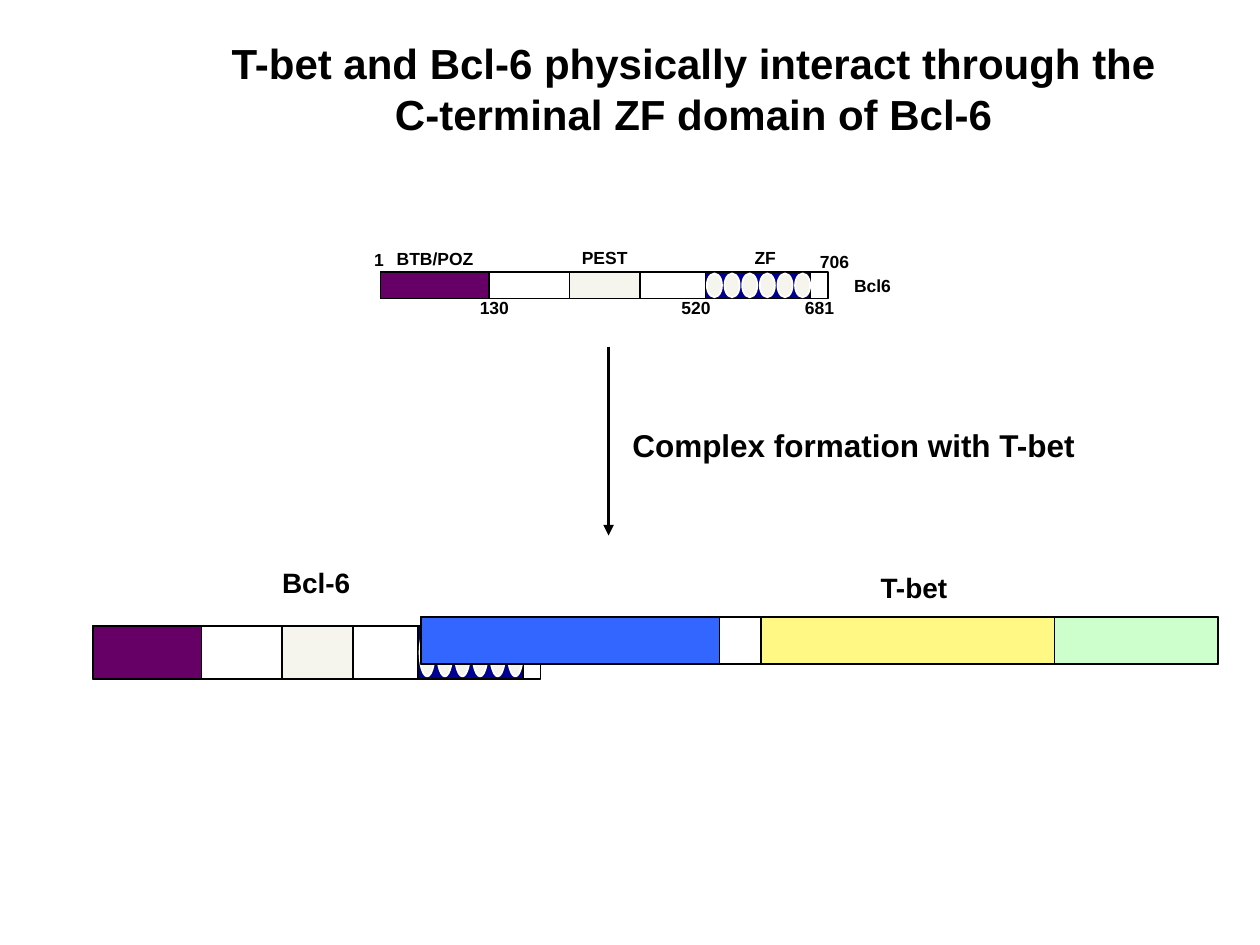
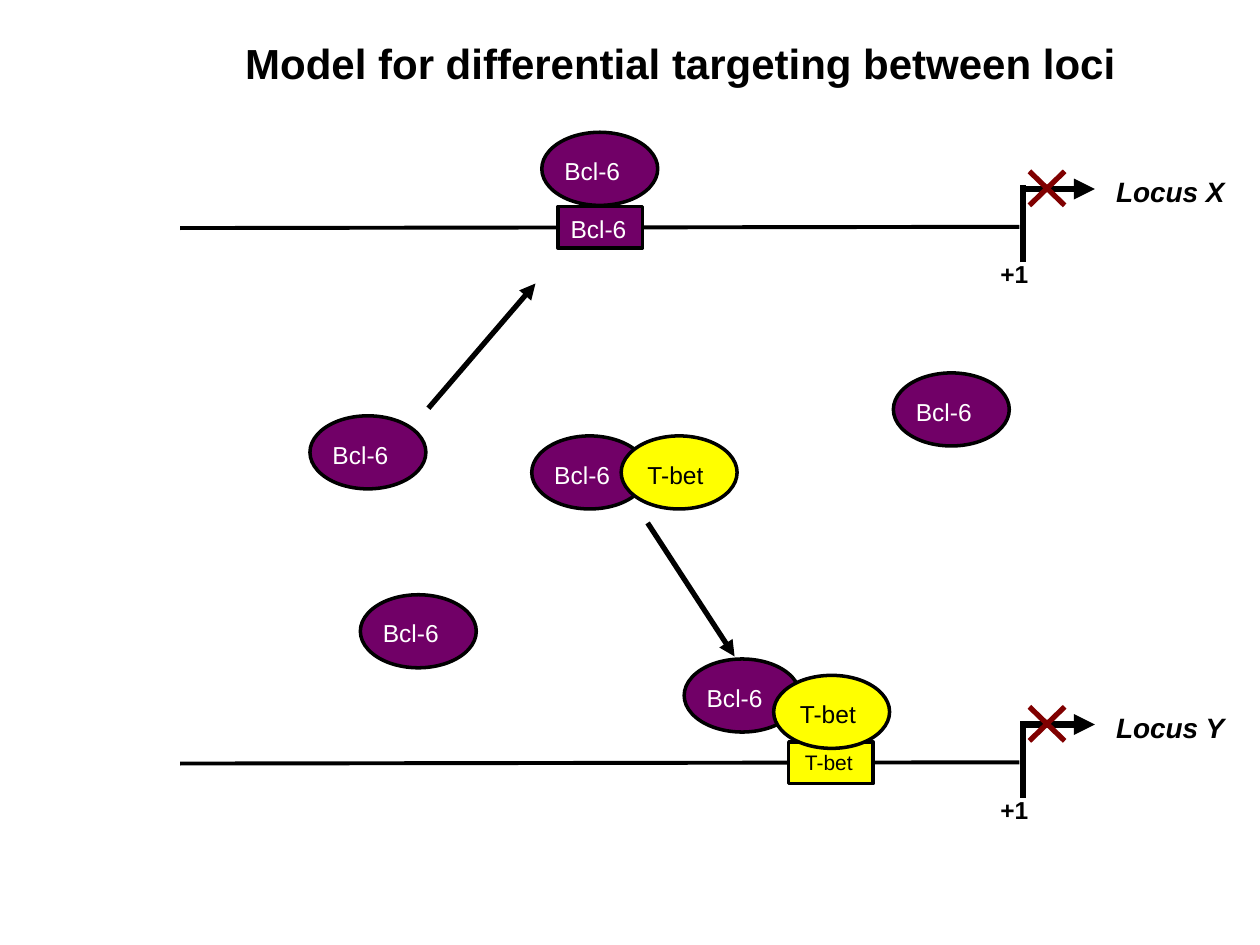
from lxml import etree
from pptx import Presentation
from pptx.dml.color import RGBColor
from pptx.enum.shapes import MSO_CONNECTOR, MSO_SHAPE
from pptx.enum.text import MSO_ANCHOR, MSO_AUTO_SIZE, PP_ALIGN
from pptx.oxml.ns import qn
from pptx.util import Inches, Pt

FONT = "Arial"
BLACK, WHITE, IVORY, NAVY = "000000", "FFFFFF", "F5F4ED", "000090"
PURPLE, BLUE, CREAM, MINT = "660066", "3366FF", "FFF885", "CCFFCC"
PLUM, YELLOW, RED = "710067", "FFFF00", "800000"

INTERACTION_TITLE = ["T-bet and Bcl-6 physically interact through the", "C-terminal ZF domain of Bcl-6"]
MODEL_TITLE = ["Model for differential targeting between loci"]

BCL6_WIDTH = 3.55
BCL6_DOMAINS = [(0, 0.86, PURPLE), (2.58, 0.83, NAVY), (1.5, 0.56, IVORY)]
ZINC_FINGERS, FINGER_START, FINGER_STEP, FINGER_WIDTH = 6, 2.59, 0.14, 0.12
BCL6_BARS = [(3.02, 2.16, 0.21), (0.74, 4.97, 0.42)]
TBET_BAR = (3.34, 4.9, 6.33, 0.37)
TBET_DOMAINS = [(2.7, 2.33, CREAM), (5.03, 1.3, MINT), (0, 2.37, BLUE)]

DOMAIN_LABELS = [
    ("Bcl6", 6.68, 2.13, 0.5),
    ("BTB/POZ", 3.05, 1.92, 0.82),
    ("1", 2.87, 1.93, 0.28),
    ("706", 6.41, 1.94, 0.44),
    ("130", 3.71, 2.31, 0.44),
    ("520", 5.31, 2.31, 0.44),
    ("681", 6.29, 2.31, 0.44),
    ("PEST", 4.52, 1.91, 0.6),
    ("ZF", 5.89, 1.91, 0.47),
]
COMPLEX_LABELS = [
    ("Bcl-6", 2.14, 4.44, 0.75, 0.37, 16),
    ("Complex formation with T-bet", 4.92, 3.33, 3.75, 0.4, 18),
    ("T-bet", 6.89, 4.48, 0.74, 0.37, 16),
]

PROTEINS = {"Bcl-6": (PLUM, WHITE, 0.08), "T-bet": (YELLOW, BLACK, 0.11)}
LOCI = [
    ("Locus X", 1.34, "Bcl-6", 4.43, 14),
    ("Locus Y", 5.59, "T-bet", 6.26, 12),
]
MOLECULES = [
    ("Bcl-6", 4.22, 3.46),
    ("T-bet", 4.93, 3.46),
    ("Bcl-6", 2.46, 3.3),
    ("Bcl-6", 2.86, 4.72),
    ("Bcl-6", 7.09, 2.96),
    ("Bcl-6", 4.3, 1.05),
    ("Bcl-6", 5.43, 5.23),
    ("T-bet", 6.14, 5.36),
]
BINDING_ARROWS = [(3.4, 3.24, 4.25, 2.25), (5.14, 4.15, 5.83, 5.21)]


def rgb(value):
    return RGBColor.from_string(value)


def add_text(s, lines, x, y, w, h, size=10, color=BLACK, bold=True, italic=False,
             align=PP_ALIGN.LEFT, wrap=False):
    tf = s.shapes.add_textbox(Inches(x), Inches(y), Inches(w), Inches(h)).text_frame
    tf.word_wrap = wrap
    tf.auto_size = MSO_AUTO_SIZE.SHAPE_TO_FIT_TEXT
    tf.vertical_anchor = MSO_ANCHOR.TOP
    for i, line in enumerate(lines):
        p = tf.paragraphs[0] if i == 0 else tf.add_paragraph()
        p.alignment = align
        r = p.add_run()
        r.text = line
        r.font.name, r.font.size = FONT, Pt(size)
        r.font.bold, r.font.italic = bold, italic
        r.font.color.rgb = rgb(color)


def add_title(s, lines, x, w, h):
    add_text(s, lines, x, 0.25, w, h, size=24, align=PP_ALIGN.CENTER)


def add_shape(s, kind, x, y, w, h, fill, line=BLACK, weight=1):
    sp = s.shapes.add_shape(kind, Inches(x), Inches(y), Inches(w), Inches(h))
    sp.shadow.inherit = False
    sp.fill.solid()
    sp.fill.fore_color.rgb = rgb(fill)
    sp.line.color.rgb = rgb(line)
    sp.line.width = Pt(weight)


def add_line(s, x1, y1, x2, y2, weight, color=BLACK, arrow=False):
    cn = s.shapes.add_connector(MSO_CONNECTOR.STRAIGHT, Inches(x1), Inches(y1), Inches(x2), Inches(y2))
    cn.line.color.rgb = rgb(color)
    cn.line.width = Pt(weight)
    spPr = cn._element.spPr
    if arrow:
        etree.SubElement(spPr.find(qn("a:ln")), qn("a:tailEnd"), type="triangle")
    etree.SubElement(spPr, qn("a:effectLst"))


def add_bar(s, x, y, w, h, domains):
    add_shape(s, MSO_SHAPE.RECTANGLE, x, y, w, h, WHITE)
    for offset, width, fill in domains:
        add_shape(s, MSO_SHAPE.RECTANGLE, x + offset, y, width, h, fill)


def add_bcl6_bar(s, x, y, h):
    add_bar(s, x, y, BCL6_WIDTH, h, BCL6_DOMAINS)
    for i in range(ZINC_FINGERS):
        add_shape(s, MSO_SHAPE.OVAL, x + FINGER_START + i * FINGER_STEP, y + 0.05 * h,
                  FINGER_WIDTH, 0.9 * h, IVORY, line=WHITE)


def add_molecule(s, name, x, y):
    fill, color, inset = PROTEINS[name]
    add_shape(s, MSO_SHAPE.OVAL, x, y, 0.92, 0.58, fill, weight=2)
    add_text(s, [name], x + inset, y + 0.14, 0.68, 0.34, size=14, color=color, bold=False)


def add_locus(s, name, y, site, site_x, site_size):
    fill, color, _ = PROTEINS[site]
    add_text(s, [name], 8.76, y, 1.13, 0.37, size=16, italic=True)
    add_line(s, 8.12, y + 0.16, 8.69, y + 0.16, 4, arrow=True)
    add_line(s, 1.43, y + 0.47, 8.09, y + 0.46, 2.25)
    add_line(s, 8.12, y + 0.74, 8.12, y + 0.13, 3)
    add_text(s, ["+1"], 7.84, y + 0.67, 0.42, 0.33, size=14)
    add_shape(s, MSO_SHAPE.RECTANGLE, site_x, y + 0.3, 0.67, 0.33, fill, weight=2)
    add_text(s, [site], site_x + (14 - site_size) * 0.015, y + 0.31, 0.74, 0.33,
             size=site_size, color=color, bold=False, wrap=True)
    for start, end in [(8.17, 8.45), (8.45, 8.17)]:
        add_line(s, start, y + 0.02, end, y + 0.29, 3, color=RED)


def build_interaction(s):
    add_title(s, INTERACTION_TITLE, 1.7, 7.61, 1.31)
    for bar in BCL6_BARS:
        add_bcl6_bar(s, *bar)
    for text, x, y, w in DOMAIN_LABELS:
        add_text(s, [text], x, y, w, 0.27, wrap=text in ("PEST", "ZF"))
    add_line(s, 4.83, 2.75, 4.83, 4.25, 2, arrow=True)
    add_bar(s, *TBET_BAR, TBET_DOMAINS)
    for text, x, y, w, h, size in COMPLEX_LABELS:
        add_text(s, [text], x, y, w, h, size=size)


def build_model(s):
    add_title(s, MODEL_TITLE, 1.81, 7.18, 0.5)
    for locus in LOCI:
        add_locus(s, *locus)
    for arrow in BINDING_ARROWS:
        add_line(s, *arrow, 3, arrow=True)
    for molecule in MOLECULES:
        add_molecule(s, *molecule)


def main():
    prs = Presentation()
    prs.slide_width, prs.slide_height = Inches(10), Inches(7.5)
    for build in (build_interaction, build_model):
        build(prs.slides.add_slide(prs.slide_layouts[6]))
    prs.save("out.pptx")


if __name__ == "__main__":
    main()
